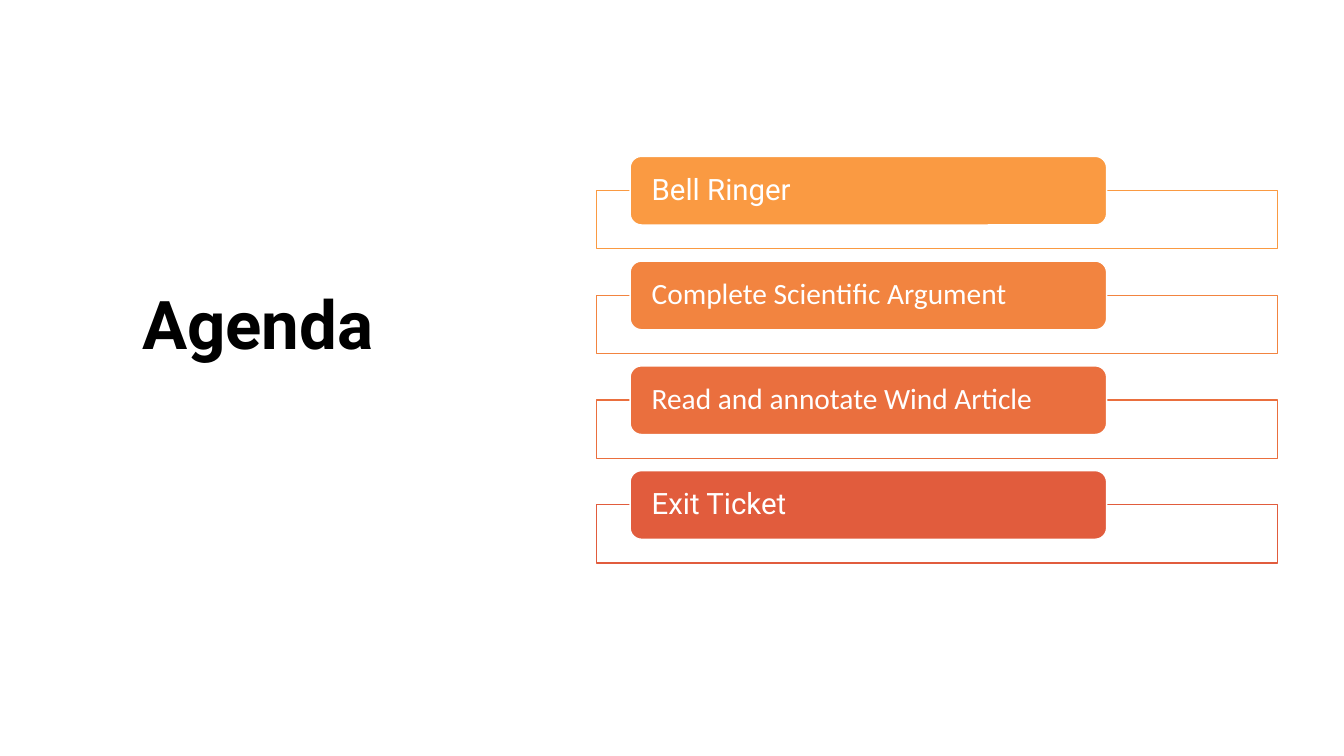
from lxml.etree import SubElement
from pptx import Presentation
from pptx.dml.color import RGBColor
from pptx.enum.shapes import MSO_SHAPE as Shape
from pptx.enum.text import MSO_ANCHOR as Anchor, PP_ALIGN as Align
from pptx.oxml.ns import qn
from pptx.util import Cm, Pt

WHITE = RGBColor(0xFF, 0xFF, 0xFF)
BLACK = RGBColor(0x00, 0x00, 0x00)
AMBER = RGBColor(0xFA, 0x9A, 0x42)
ORANGE = RGBColor(0xF2, 0x84, 0x40)
RUST = RGBColor(0xEA, 0x6F, 0x3E)
RED = RGBColor(0xE1, 0x5C, 0x3D)

AGENDA = [
    ("Bell Ringer", "Roboto", AMBER),
    ("Complete Scientific Argument", "Calibri", ORANGE),
    ("Read and annotate Wind Article", "Calibri", RUST),
    ("Exit Ticket", "Roboto", RED),
]
TOP, PITCH = 3.94, 2.64


class AgendaSlide:
    """Holds the text style and the current slide, and draws its elements."""

    title_font = {"name": "Roboto", "size": Pt(48), "bold": True}
    item_font = {"size": Pt(21), "bold": False}
    item_frame = {"word_wrap": True, "vertical_anchor": Anchor.MIDDLE,
                  "margin_left": Cm(0.46), "margin_right": Cm(0.46),
                  "margin_top": 0, "margin_bottom": 0}
    title_frame = {"word_wrap": True, "vertical_anchor": Anchor.TOP}

    def __init__(self, prs):
        self.s = prs.slides.add_slide(prs.slide_layouts[6])

    def put_text(self, sp, text, color, frame, font):
        tf = sp.text_frame
        for name, value in frame.items():
            setattr(tf, name, value)
        p = tf.paragraphs[0]
        p.alignment, p.line_spacing = Align.LEFT, 0.9
        r = p.add_run()
        r.text = text
        for name, value in font.items():
            setattr(r.font, name, value)
        r.font.color.rgb = color

    def title(self, text, *box):
        sp = self.s.shapes.add_textbox(*map(Cm, box))
        self.put_text(sp, text, BLACK, self.title_frame, self.title_font)

    def box(self, kind, fill, line, *box):
        sp = self.s.shapes.add_shape(kind, *map(Cm, box))
        sp.shadow.inherit = False
        sp.fill.solid()
        sp.fill.fore_color.rgb = fill
        sp.line.color.rgb = line
        sp.line.width = Pt(1)
        return sp

    def item(self, text, font, color, top):
        frame = self.box(Shape.RECTANGLE, WHITE, color, 15.04, top + 0.86, 17.15, 1.47)
        rgb = frame.element.spPr.find(qn("a:solidFill"))[0]
        SubElement(rgb, qn("a:alpha"), val="90000")
        label = self.box(Shape.ROUNDED_RECTANGLE, color, WHITE, 15.88, top, 12.01, 1.73)
        self.put_text(label, text, WHITE, self.item_frame, {**self.item_font, "name": font})


def main():
    prs = Presentation()
    prs.slide_width, prs.slide_height = Cm(33.87), Cm(19.05)
    slide = AgendaSlide(prs)
    slide.title("Agenda", 3.33, 7.21, 11.05, 9.91)
    for i, (text, font, color) in enumerate(AGENDA):
        slide.item(text, font, color, TOP + i * PITCH)
    prs.save("out.pptx")


if __name__ == "__main__":
    main()
